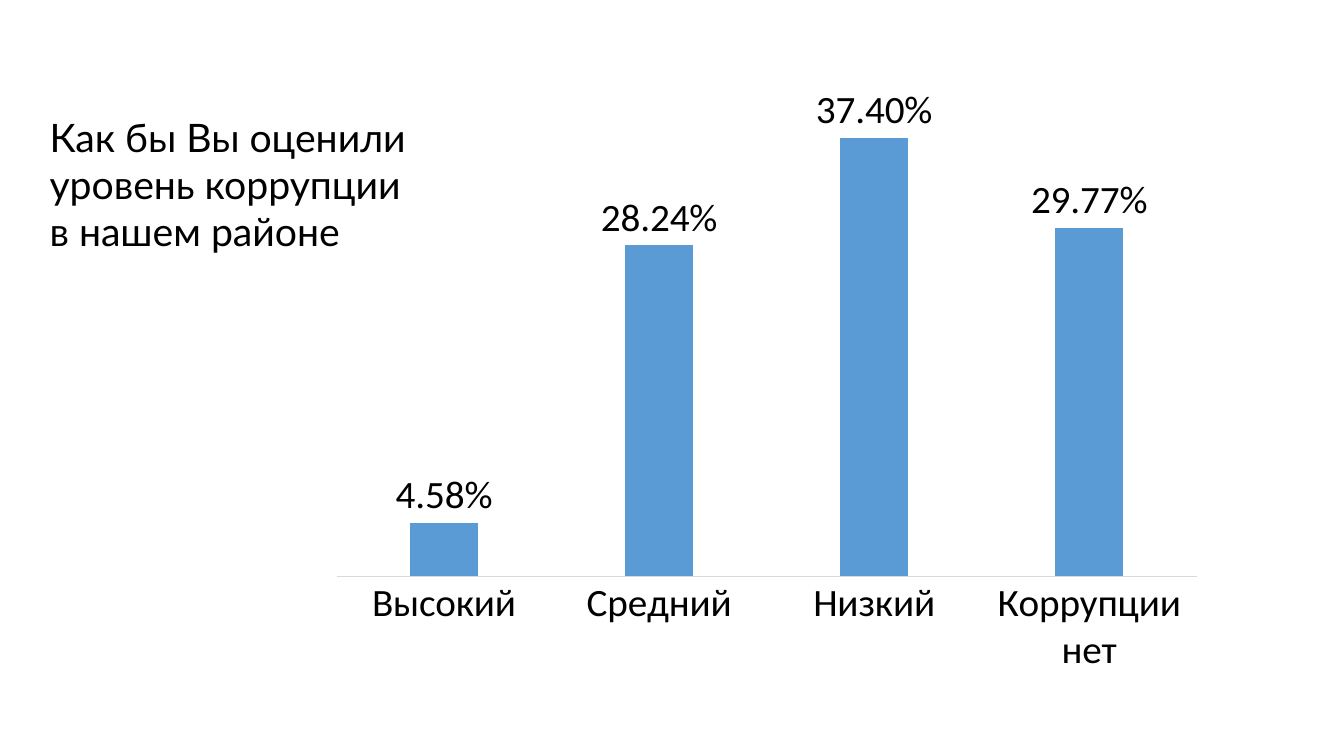
from dataclasses import dataclass

from pptx import Presentation
from pptx.chart.data import CategoryChartData as Data
from pptx.dml.color import RGBColor as Rgb
from pptx.enum.chart import XL_CHART_TYPE as Kind
from pptx.enum.chart import XL_LABEL_POSITION as Spot
from pptx.enum.chart import XL_TICK_MARK as Tick
from pptx.enum.text import MSO_AUTO_SIZE as Fit
from pptx.util import Cm, Pt


@dataclass
class Theme:
    ink: Rgb = Rgb(0, 0, 0)
    bar: Rgb = Rgb(0x5B, 0x9B, 0xD5)
    rule: Rgb = Rgb(0xD9, 0xD9, 0xD9)
    size: Pt = Pt(28)
    thin: Pt = Pt(0.75)
    head: str = "Lato"
    body: str = "Calibri"


theme = Theme()


def style(font, name):
    font.name, font.size = name, theme.size
    font.bold = False
    font.color.rgb = theme.ink


def write(text, *, left, top, width, height, name):
    box = slide.shapes.add_textbox(Cm(left), Cm(top), Cm(width), Cm(height))
    frame = box.text_frame
    frame.word_wrap = True
    frame.auto_size = Fit.SHAPE_TO_FIT_TEXT
    run = frame.paragraphs[0].add_run()
    run.text = text
    style(run.font, name)


deck = Presentation()
deck.slide_width, deck.slide_height = Cm(33.87), Cm(19.05)
slide = deck.slides.add_slide(deck.slide_layouts[6])

# Question
write("Как бы Вы оценили уровень коррупции в нашем районе",
      left=1, top=2.72, width=9.52, height=3.84, name=theme.head)

# Answers
data = Data(number_format="0.00%")
data.categories = ["Высокий", "Средний", "Низкий", "Коррупции нет"]
data.add_series("Series 1", [0.0458, 0.2824, 0.374, 0.2977])
chart = slide.shapes.add_chart(Kind.COLUMN_CLUSTERED, Cm(8.03), Cm(2.21),
                               Cm(22.58), Cm(15.06), data).chart
chart.has_legend = chart.has_title = False
style(chart.font, theme.body)

# Bars
plot = chart.plots[0]
plot.gap_width, plot.overlap = 219, -27
plot.vary_by_categories = False
fill = plot.series[0].format.fill
fill.solid()
fill.fore_color.rgb = theme.bar

# Labels above the bars
plot.has_data_labels = True
marks = plot.data_labels
marks.show_value = True
marks.position = Spot.OUTSIDE_END
marks.number_format, marks.number_format_is_linked = "0.00%", False
style(marks.font, theme.body)

# Axes
base = chart.category_axis
base.major_tick_mark = base.minor_tick_mark = Tick.NONE
base.format.line.color.rgb = theme.rule
base.format.line.width = theme.thin
style(base.tick_labels.font, theme.body)
scale = chart.value_axis
scale.visible = False
scale.has_major_gridlines = False
scale.minimum_scale, scale.maximum_scale = 0, 0.4

deck.save("out.pptx")
